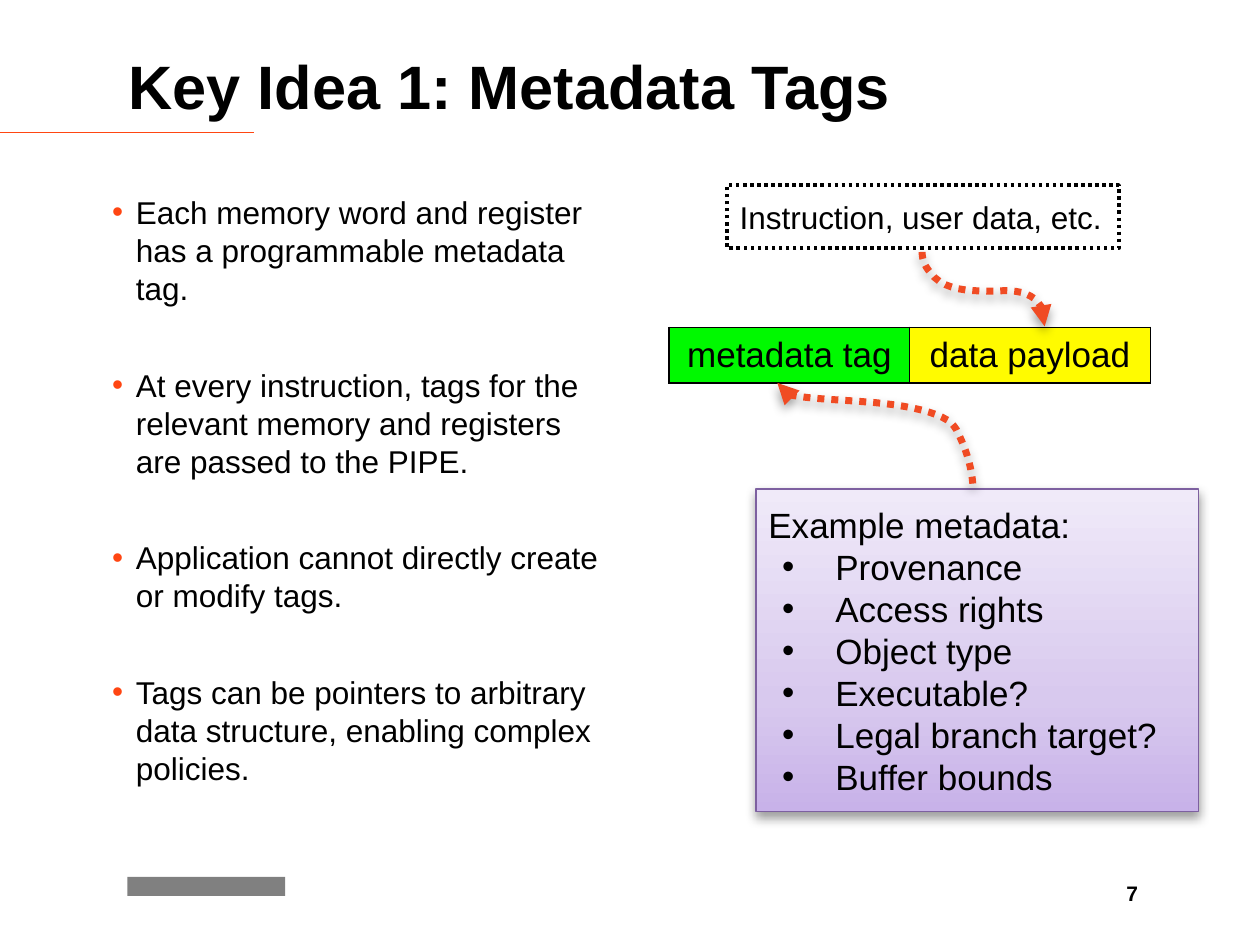
from copy import deepcopy

from lxml.etree import SubElement
from pptx import Presentation
from pptx.dml.color import RGBColor
from pptx.enum.dml import MSO_LINE
from pptx.enum.shapes import MSO_CONNECTOR, MSO_SHAPE
from pptx.enum.text import MSO_ANCHOR, PP_ALIGN
from pptx.oxml.ns import qn
from pptx.util import Cm, Pt

TITLE = "Key Idea 1: Metadata Tags"
POINTS = [
    "Each memory word and register has a programmable metadata tag.",
    "At every instruction, tags for the relevant memory and registers are passed to the PIPE.",
    "Application cannot directly create or modify tags.",
    "Tags can be pointers to arbitrary data structure, enabling complex policies.",
]
WORD_PARTS = [("metadata tag", "green"), ("data payload", "yellow")]
PAYLOAD_LABEL = "Instruction, user data, etc."
EXAMPLES_HEADING = "Example metadata:"
EXAMPLES = ["Provenance", "Access rights", "Object type", "Executable?",
            "Legal branch target?", "Buffer bounds"]
PAGE_NUMBER = "7"

COLORS = {
    "black": "000000", "accent": "FF4612", "arrow": "F04B23", "grey": "808080",
    "green": "00F900", "yellow": "FFFB00", "purple": "7D60A0",
}
PURPLE_STOPS = [(0, "C8B2E9"), (0.35, "D8C9EE"), (1, "F0EAF9")]

# Bezier paths in cm: a start point, then (control, control, end) triples
TAG_ARROW = ((19.61, 9.75), [
    ((19.58, 9.37), (19.46, 9.02), (19.28, 8.66)),
    ((19.23, 8.59), (19.18, 8.51), (19.08, 8.46)),
    ((18.8, 8.28), (18.16, 8.15), (17.42, 8.1)),
    ((16.79, 8.05), (16.0, 8.03), (15.72, 7.9)),
    ((15.62, 7.85), (15.6, 7.77), (15.67, 7.72)),
])
PAYLOAD_ARROW = ((18.59, 5.08), [
    ((18.59, 5.23), (18.64, 5.36), (18.75, 5.49)),
    ((19.02, 5.87), (19.56, 5.87), (20.07, 5.87)),
    ((20.42, 5.84), (20.8, 5.87), (20.98, 6.17)),
    ((21.08, 6.27), (21.11, 6.45), (21.06, 6.58)),
])


def color(name):
    return RGBColor.from_string(COLORS[name])


def place(shape, left, top, width, height):
    shape.left, shape.top, shape.width, shape.height = map(Cm, (left, top, width, height))


def set_insets(frame, left, top, right, bottom):
    frame.margin_left, frame.margin_top = Cm(left), Cm(top)
    frame.margin_right, frame.margin_bottom = Cm(right), Cm(bottom)


def write(paragraph, text, size, bold=False, align=PP_ALIGN.LEFT):
    paragraph.text = text
    paragraph.alignment = align
    font = paragraph.font
    font.name, font.size, font.bold = "Arial", Pt(size), bold
    font.color.rgb = color("black")


def add_bullet(paragraph, indent, hanging, bullet_color):
    props = paragraph._p.get_or_add_pPr()
    props.set("marL", str(Cm(indent)))
    props.set("indent", str(-Cm(hanging)))
    bullet = [("buClr", {}), ("buFont", {"typeface": "Arial"}), ("buChar", {"char": "•"})]
    for position, (tag, values) in enumerate(bullet):
        element = SubElement(props, qn("a:" + tag), values)
        if tag == "buClr":
            SubElement(element, qn("a:srgbClr"), val=COLORS[bullet_color])
        first_after_spacing = len(props.findall(qn("a:lnSpc")) + props.findall(qn("a:spcBef")))
        props.insert(first_after_spacing + position, element)


def add_shadow(shape):
    shape.shadow.inherit = False
    effects = shape._element.spPr.find(qn("a:effectLst"))
    shadow = SubElement(effects, qn("a:outerShdw"), blurRad=str(Pt(6)), dist=str(Pt(3)),
                        dir="5400000", rotWithShape="0")
    shade = SubElement(shadow, qn("a:srgbClr"), val=COLORS["black"])
    SubElement(shade, qn("a:alpha"), val="38000")


def set_line(line, name, width, dash=None):
    line.color.rgb = color(name)
    line.width = Pt(width)
    if dash:
        line.dash_style = dash


def fill_gradient(fill, shape, stops):
    fill.gradient()
    fill.gradient_angle = 90
    stop_list = shape._element.spPr.find(qn("a:gradFill")).find(qn("a:gsLst"))
    stop_list.append(deepcopy(stop_list[-1]))
    for stop, (position, value) in zip(fill.gradient_stops, stops):
        stop.position = position
        stop.color.rgb = RGBColor.from_string(value)


def bezier_points(start, segments, steps=10):
    for first, second, end in segments:
        for step in range(1, steps + 1):
            t = step / steps
            weights = ((1 - t) ** 3, 3 * t * (1 - t) ** 2, 3 * t * t * (1 - t), t ** 3)
            yield tuple(Cm(sum(w * point[axis] for w, point in
                               zip(weights, (start, first, second, end)))) for axis in (0, 1))
        start = end


def add_curved_arrow(page, curve):
    start, segments = curve
    builder = page.shapes.build_freeform(Cm(start[0]), Cm(start[1]))
    builder.add_line_segments(list(bezier_points(start, segments)), close=False)
    arrow = builder.convert_to_shape()
    arrow.fill.background()
    set_line(arrow.line, "arrow", 4, MSO_LINE.ROUND_DOT)
    SubElement(arrow.line._get_or_add_ln(), qn("a:tailEnd"), type="triangle")
    add_shadow(arrow)


def add_frame_parts(page):
    rule = page.shapes.add_connector(MSO_CONNECTOR.STRAIGHT, 0, Cm(2.67), Cm(5.13), Cm(2.67))
    set_line(rule.line, "accent", 1)
    SubElement(rule._element.spPr, qn("a:effectLst"))

    mark = page.shapes.add_shape(MSO_SHAPE.RECTANGLE, Cm(2.57), Cm(17.68), Cm(3.18), Cm(0.38))
    mark.shadow.inherit = False
    mark.fill.solid()
    mark.fill.fore_color.rgb = color("grey")
    mark.line.fill.background()

    title = page.shapes.title
    place(title, 2.59, 0.13, 21.56, 3.18)
    set_insets(title.text_frame, 0, 0.13, 0.25, 0.13)
    title.text_frame.vertical_anchor = MSO_ANCHOR.MIDDLE
    write(title.text_frame.paragraphs[0], TITLE, 35, bold=True)

    number = page.shapes.add_textbox(Cm(21.89), Cm(17.63), Cm(1.3), Cm(1.02)).text_frame
    number.word_wrap = True
    set_insets(number, 0.25, 0.13, 0.25, 0)
    write(number.paragraphs[0], PAGE_NUMBER, 12, bold=True, align=PP_ALIGN.RIGHT)


def add_points(page):
    frame = page.shapes.add_textbox(Cm(2.26), Cm(3.76), Cm(10.24), Cm(11.07)).text_frame
    frame.word_wrap = True
    set_insets(frame, 0, 0.13, 0.25, 0.13)
    for index, text in enumerate(POINTS):
        paragraph = frame.paragraphs[0] if index == 0 else frame.add_paragraph()
        write(paragraph, text, 18)
        paragraph.line_spacing = Pt(21.7)
        paragraph.space_before = Pt(33.5 if index else 6)
        add_bullet(paragraph, 0.48, 0.48, "accent")


def add_tagged_word(page):
    table = page.shapes.add_table(1, len(WORD_PARTS), Cm(13.49), Cm(6.6), Cm(9.7), Cm(1.12)).table
    table.first_row = table.horz_banding = False
    for cell, (text, fill) in zip(table.rows[0].cells, WORD_PARTS):
        set_insets(cell, 0, 0, 0, 0)
        cell.vertical_anchor = MSO_ANCHOR.MIDDLE
        write(cell.text_frame.paragraphs[0], text, 20, align=PP_ALIGN.CENTER)
        props = cell._tc.get_or_add_tcPr()
        for side in ("lnL", "lnR", "lnT", "lnB"):
            border = SubElement(props, qn("a:" + side), w=str(Pt(1)))
            SubElement(SubElement(border, qn("a:solidFill")), qn("a:srgbClr"), val=COLORS["black"])
        cell.fill.solid()
        cell.fill.fore_color.rgb = color(fill)


def add_panels(page):
    examples = page.shapes.add_shape(MSO_SHAPE.RECTANGLE, Cm(15.24), Cm(9.86), Cm(8.92), Cm(6.5))
    fill_gradient(examples.fill, examples, PURPLE_STOPS)
    set_line(examples.line, "purple", 1)
    add_shadow(examples)
    frame = examples.text_frame
    set_insets(frame, 0.25, 0.25, 0.25, 0.25)
    frame.vertical_anchor = MSO_ANCHOR.MIDDLE
    for index, text in enumerate([EXAMPLES_HEADING] + EXAMPLES):
        paragraph = frame.add_paragraph() if index else frame.paragraphs[0]
        write(paragraph, text, 20)
        paragraph.line_spacing = Pt(24)
        if index:
            add_bullet(paragraph, 1.35, 1.07, "black")

    label = page.shapes.add_shape(MSO_SHAPE.RECTANGLE, Cm(14.66), Cm(3.73), Cm(7.9), Cm(1.27))
    label.shadow.inherit = False
    label.fill.background()
    set_line(label.line, "black", 2, MSO_LINE.ROUND_DOT)
    label.text_frame.word_wrap = False
    set_insets(label.text_frame, 0.25, 0.25, 0.25, 0.25)
    write(label.text_frame.paragraphs[0], PAYLOAD_LABEL, 18)


def main():
    deck = Presentation()
    deck.slide_width, deck.slide_height = Cm(25.4), Cm(19.05)
    page = deck.slides.add_slide(deck.slide_layouts[5])
    add_frame_parts(page)
    add_points(page)
    add_tagged_word(page)
    add_panels(page)
    for curve in (TAG_ARROW, PAYLOAD_ARROW):
        add_curved_arrow(page, curve)
    deck.save("out.pptx")


if __name__ == "__main__":
    main()
